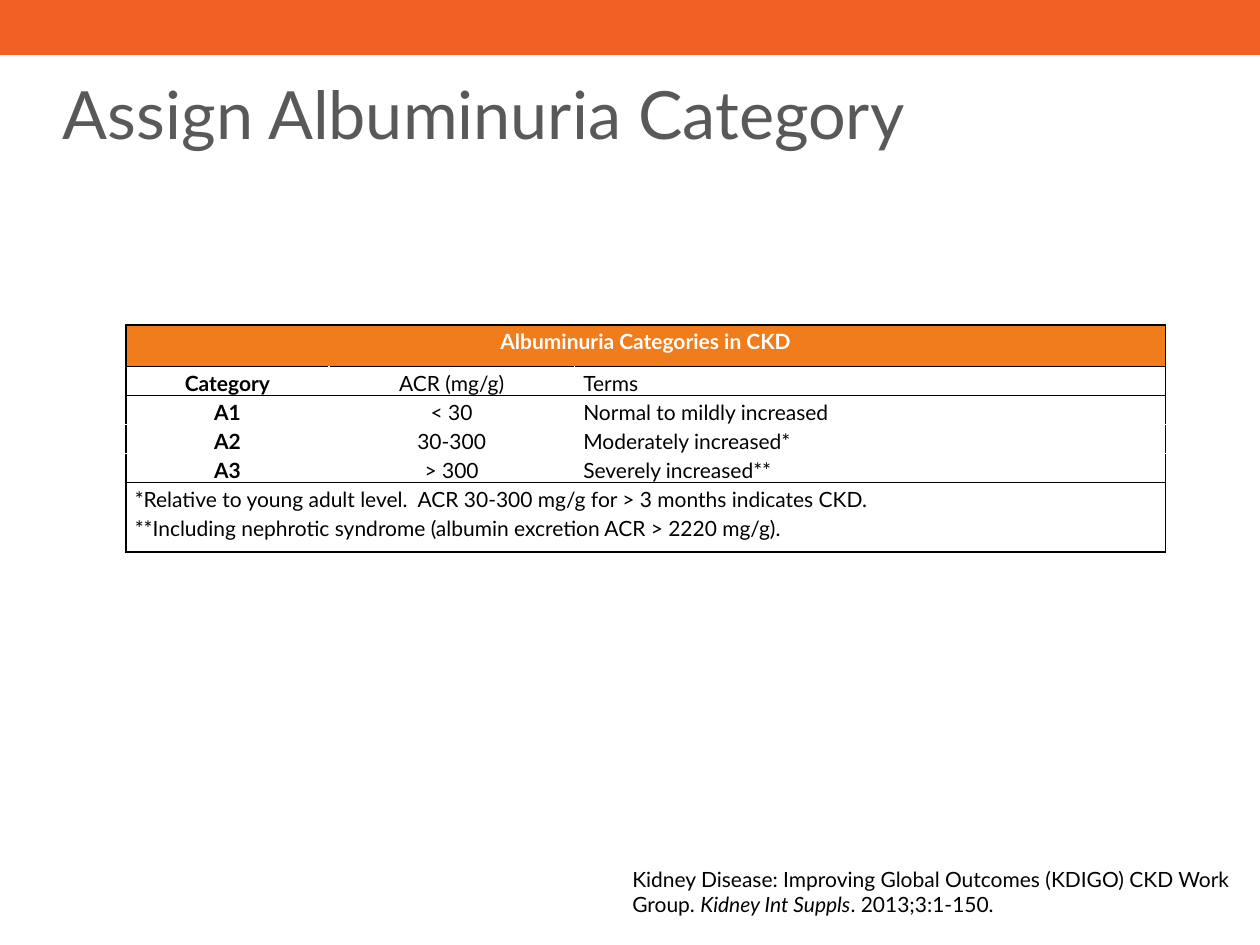
"""Build the slide on albuminuria categories in CKD."""
from dataclasses import dataclass

import pptx
import pptx.dml.color
import pptx.enum.shapes
import pptx.enum.text
import pptx.oxml
import pptx.oxml.ns
import pptx.util

Inches, Pt = pptx.util.Inches, pptx.util.Pt
RGBColor = pptx.dml.color.RGBColor
ALIGN = pptx.enum.text.PP_ALIGN
ANCHOR = pptx.enum.text.MSO_ANCHOR

FONT = "Lato"
BAND = RGBColor(0xF1, 0x60, 0x25)
HEAD = RGBColor(0xF0, 0x7C, 0x1C)
GREY = RGBColor(0x59, 0x59, 0x59)
BLACK = RGBColor(0, 0, 0)
WHITE = RGBColor(0xFF, 0xFF, 0xFF)

COLS = (1.61, 1.95, 4.69)
LAST = len(COLS) - 1


@dataclass
class Row:
    high: float
    texts: tuple[str, ...]
    top: RGBColor = BLACK
    base: RGBColor = BLACK
    anchor: ANCHOR = ANCHOR.TOP


ROWS = (
    Row(0.33, ("Albuminuria Categories in CKD",)),
    Row(0.21, ("Category", "ACR (mg/g)", "Terms"), anchor=ANCHOR.BOTTOM),
    Row(0.21, ("A1", "< 30", "Normal to mildly increased"), base=WHITE),
    Row(0.21, ("A2", "30-300", "Moderately increased*"), WHITE, WHITE),
    Row(0.21, ("A3", "> 300", "Severely increased**"), top=WHITE),
    Row(0.55, ("*Relative to young adult level.  ACR 30-300 mg/g for > 3 months indicates CKD.\n"
               "**Including nephrotic syndrome (albumin excretion ACR > 2220 mg/g).",)),
)


def style(para, size: float, color: RGBColor, bold: bool = False) -> None:
    """Set the font of a paragraph."""
    font = para.font
    font.name, font.size, font.bold = FONT, Pt(size), bold
    font.color.rgb = color


def border(cell, **sides: RGBColor) -> None:
    """Draw one-point cell borders, given in the order L, R, T, B."""
    props = cell._tc.get_or_add_tcPr()
    space = pptx.oxml.ns.nsdecls("a")
    for spot, (side, color) in enumerate(sides.items()):
        props.insert(spot, pptx.oxml.parse_xml(
            f'<a:ln{side} {space} w="12700"><a:solidFill>'
            f'<a:srgbClr val="{color}"/></a:solidFill></a:ln{side}>'))


def add_band(slide) -> None:
    """Add the coloured band along the top edge."""
    band = slide.shapes.add_shape(
        pptx.enum.shapes.MSO_SHAPE.RECTANGLE, 0, 0, Inches(10), Inches(0.42))
    band.shadow.inherit = False
    band.fill.solid()
    band.fill.fore_color.rgb = BAND
    band.line.color.rgb = BAND
    band.line.width = Pt(2)


def add_title(slide) -> None:
    """Add the slide title."""
    frame = slide.shapes.add_textbox(
        Inches(0.5), Inches(0.58), Inches(9), Inches(0.97)).text_frame
    frame.word_wrap = True
    frame.margin_left = frame.margin_right = 0
    frame.margin_top = frame.margin_bottom = 0
    frame.text = "Assign Albuminuria Category"
    style(frame.paragraphs[0], 38, GREY)


def fill_cell(cell, row: Row, col: int, head: bool) -> None:
    """Write and format one cell of the table."""
    span = len(row.texts) == 1
    cell.margin_left = cell.margin_right = Inches(0.07)
    cell.margin_top = cell.margin_bottom = 0
    cell.vertical_anchor = row.anchor
    if head:
        cell.fill.solid()
        cell.fill.fore_color.rgb = HEAD
    else:
        cell.fill.background()
    border(cell,
           L=BLACK if span or col == 0 else WHITE,
           R=BLACK if span or col == LAST else WHITE,
           T=row.top, B=row.base)
    if col < len(row.texts):
        cell.text = row.texts[col]
    for para in cell.text_frame.paragraphs:
        mid = head or not span and col < LAST
        para.alignment = ALIGN.CENTER if mid else ALIGN.LEFT
        para.line_spacing = 1.15
        bold = head or not span and col == 0
        style(para, 12, WHITE if head else BLACK, bold)


def add_grid(slide) -> None:
    """Add the table of categories."""
    table = slide.shapes.add_table(
        len(ROWS), len(COLS), Inches(1), Inches(2.58),
        Inches(sum(COLS)), Inches(sum(row.high for row in ROWS))).table
    table.first_row = table.horz_banding = False
    for col, wide in enumerate(COLS):
        table.columns[col].width = Inches(wide)
    for line, row in enumerate(ROWS):
        table.rows[line].height = Inches(row.high)
        if len(row.texts) == 1:
            table.cell(line, 0).merge(table.cell(line, LAST))
        for col in range(len(COLS)):
            fill_cell(table.cell(line, col), row, col, line == 0)


def add_source(slide) -> None:
    """Add the citation at the lower right."""
    frame = slide.shapes.add_textbox(
        Inches(4.92), Inches(6.83), Inches(5), Inches(0.5)).text_frame
    frame.word_wrap = True
    frame.auto_size = pptx.enum.text.MSO_AUTO_SIZE.SHAPE_TO_FIT_TEXT
    para = frame.paragraphs[0]
    style(para, 12, BLACK)
    para.add_run().text = ("Kidney Disease: Improving Global Outcomes (KDIGO) "
                           "CKD Work Group. ")
    name = para.add_run()
    name.text = "Kidney Int Suppls"
    name.font.italic = True
    para.add_run().text = ". 2013;3:1-150."


def main() -> None:
    """Build and save the deck."""
    deck = pptx.Presentation()
    deck.slide_width, deck.slide_height = Inches(10), Inches(7.5)
    slide = deck.slides.add_slide(deck.slide_layouts[6])
    add_band(slide)
    add_title(slide)
    add_grid(slide)
    add_source(slide)
    deck.save("out.pptx")


if __name__ == "__main__":
    main()
